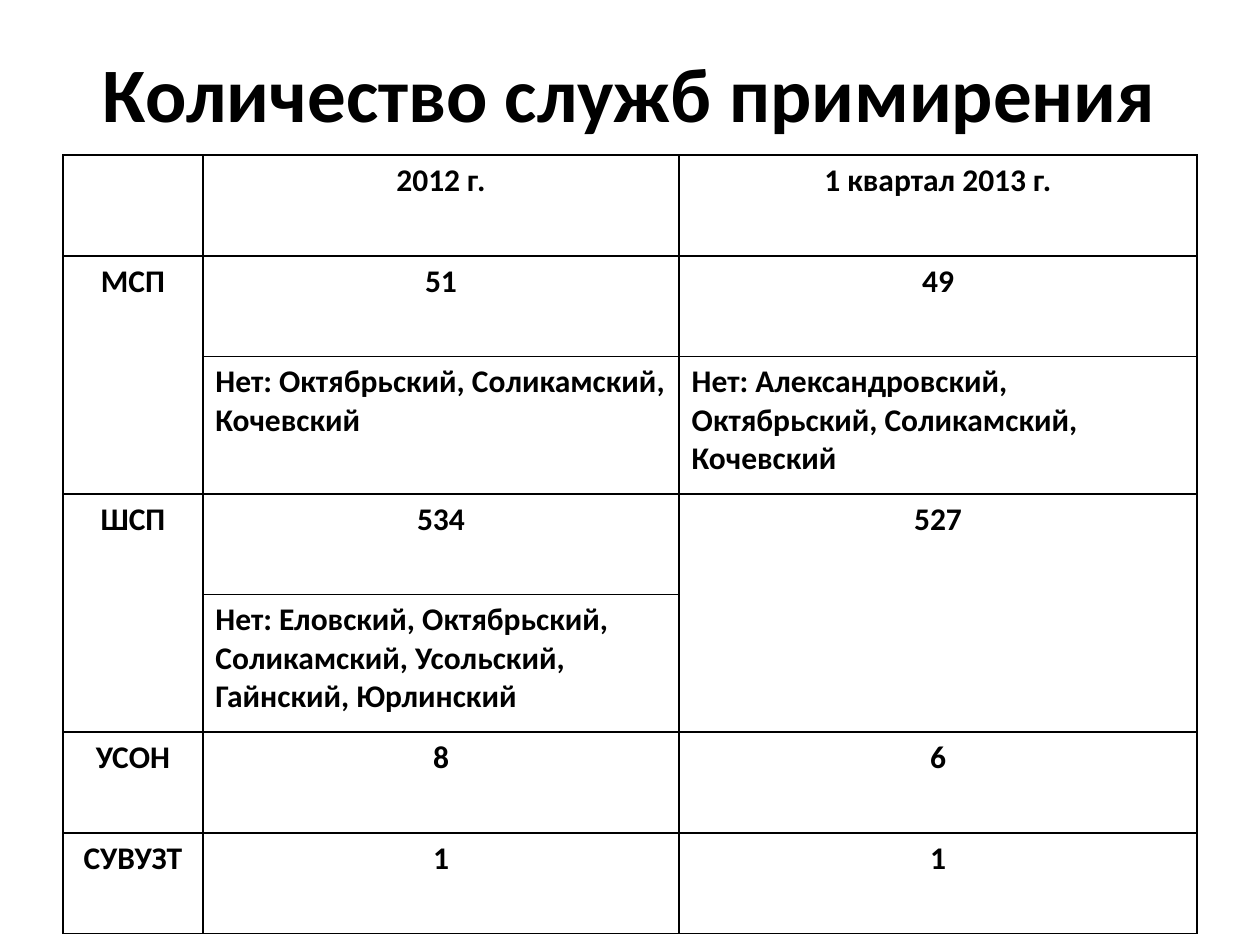
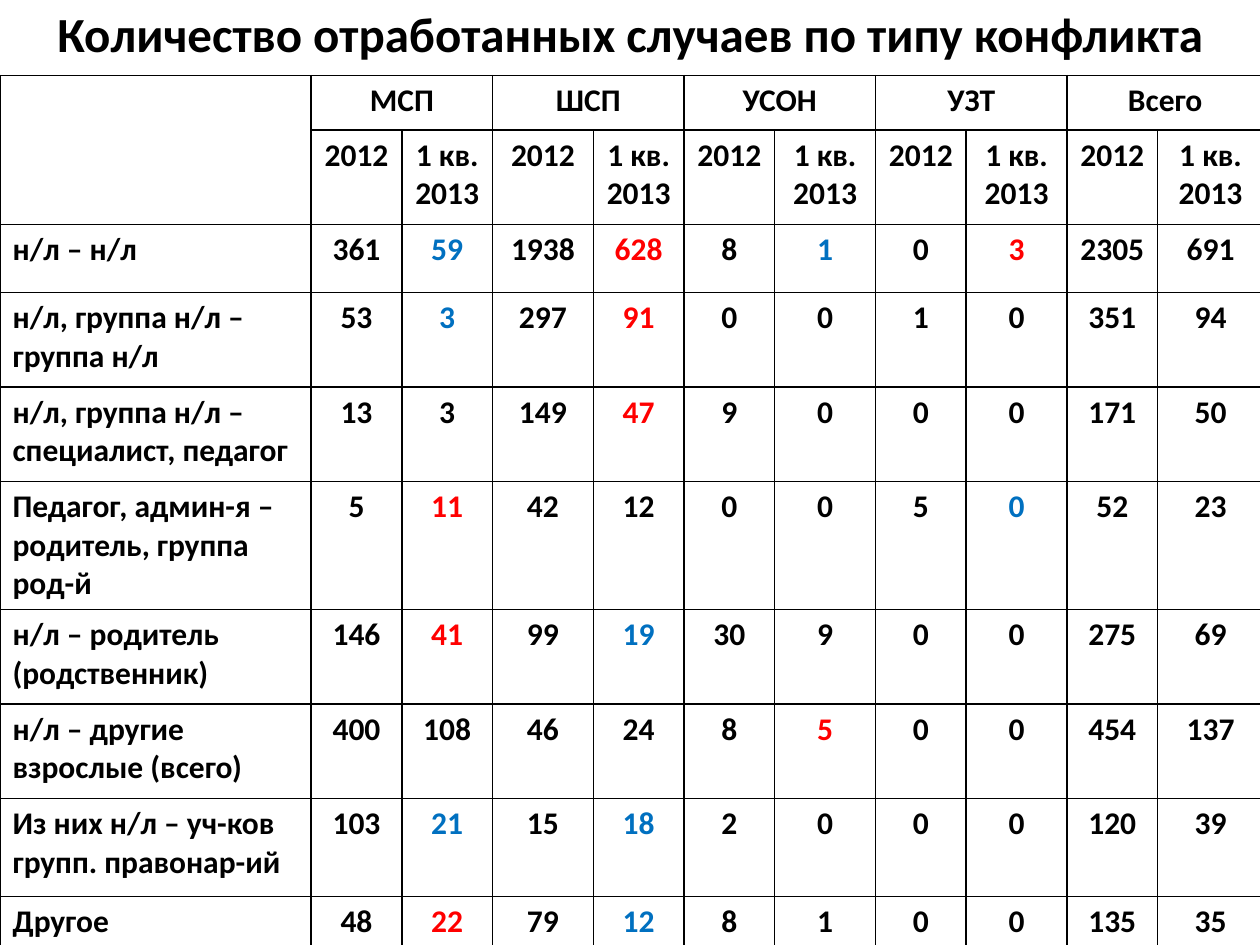
from lxml import etree
from pptx import Presentation
from pptx.dml.color import RGBColor
from pptx.enum import text
from pptx.oxml import ns
from pptx.util import Inches, Pt

FONT = "Calibri"
COLORS = {"text": "000000", "border": "000000", "up": "FF0000", "down": "0070C0"}
MARKS = {"+": "up", "-": "down"}  # last character of a highlighted value


def style(p, size, color="text", align=text.PP_ALIGN.CENTER):
    p.alignment = align
    p.font.name, p.font.size, p.font.bold = FONT, Pt(size), True
    p.font.color.rgb = RGBColor.from_string(COLORS[color])


def add_border(cell):
    """Draw a thin solid line on all four sides of a table cell."""
    tc_pr = cell._tc.get_or_add_tcPr()
    for side in ("a:lnL", "a:lnR", "a:lnT", "a:lnB"):
        ln = etree.SubElement(tc_pr, ns.qn(side), w=str(Pt(1)))
        fill = etree.SubElement(ln, ns.qn("a:solidFill"))
        etree.SubElement(fill, ns.qn("a:srgbClr"), val=COLORS["border"])


services = [
    ["", "2012 г.", "1 квартал 2013 г."],
    ["МСП", "51", "49"],
    ["", "Нет: Октябрьский, Соликамский, Кочевский",
     "Нет: Александровский, Октябрьский, Соликамский, Кочевский"],
    ["ШСП", "534", "527"],
    ["", "Нет: Еловский, Октябрьский, Соликамский, Усольский, Гайнский, Юрлинский", ""],
    ["УСОН", "8", "6"],
    ["СУВУЗТ", "1", "1"],
]

groups = ["МСП", "ШСП", "УСОН", "УЗТ", "Всего"]
conflicts = {
    "н/л – н/л": "361 59- 1938 628+ 8 1- 0 3+ 2305 691",
    "н/л, группа н/л – группа н/л": "53 3- 297 91+ 0 0 1 0 351 94",
    "н/л, группа н/л – специалист, педагог": "13 3 149 47+ 9 0 0 0 171 50",
    "Педагог, админ-я – родитель, группа род-й": "5 11+ 42 12 0 0 5 0- 52 23",
    "н/л – родитель (родственник)": "146 41+ 99 19- 30 9 0 0 275 69",
    "н/л – другие взрослые (всего)": "400 108 46 24 8 5+ 0 0 454 137",
    "Из них н/л – уч-ков групп. правонар-ий": "103 21- 15 18- 2 0 0 0 120 39",
    "Другое": "48 22+ 79 12- 8 1 0 0 135 35",
}
cases = [[""], [""]]
for group in groups:
    cases[0] += [group, ""]
    cases[1] += ["2012", "1 кв. 2013"]
cases += [[label, *values.split()] for label, values in conflicts.items()]

slides = [
    {
        "title": "Количество служб примирения", "size": 44,
        "title_box": (0.5, 0.3, 9, 0.85), "table_box": (0.5, 1.23, 9, 6.2),
        "cols": [1.11, 3.78, 4.11],
        "rows": [0.8, 0.8, 1.09, 0.8, 1.09, 0.8, 0.8],
        "cells": services,
        "left": [(2, 1), (2, 2), (4, 1)],
        "merges": [(1, 0, 2, 0), (3, 0, 4, 0), (3, 2, 4, 2)],
    },
    {
        "title": "Количество отработанных случаев по типу конфликта", "size": 28,
        "title_box": (0, 0, 10, 0.52), "table_box": (0, 0.6, 10, 6.91),
        "cols": [2.47, 0.72, 0.72, 0.8, 0.72, 0.72, 0.8, 0.72, 0.8, 0.72, 0.84],
        "rows": [0.43, 0.75, 0.54, 0.75, 0.75, 0.8, 0.75, 0.75, 0.78, 0.43],
        "cells": cases,
        "left": [(row, 0) for row in range(2, len(cases))],
        "merges": [(0, 0, 1, 0)] + [(0, c, 0, c + 1) for c in range(1, 11, 2)],
    },
]

prs = Presentation()
prs.slide_width, prs.slide_height = Inches(10), Inches(7.5)

for data in slides:
    s = prs.slides.add_slide(prs.slide_layouts[5])
    title = s.shapes.title
    title.left, title.top, title.width, title.height = map(Inches, data["title_box"])
    tf = title.text_frame
    tf.text = data["title"]
    tf.auto_size = text.MSO_AUTO_SIZE.NONE
    tf.vertical_anchor = text.MSO_ANCHOR.MIDDLE
    style(tf.paragraphs[0], data["size"])

    table = s.shapes.add_table(len(data["rows"]), len(data["cols"]),
                               *map(Inches, data["table_box"])).table
    table.first_row = table.horz_banding = False
    for column, width in zip(table.columns, data["cols"]):
        column.width = Inches(width)
    for row, height in zip(table.rows, data["rows"]):
        row.height = Inches(height)

    for r, values in enumerate(data["cells"]):
        for c, value in enumerate(values):
            cell = table.cell(r, c)
            add_border(cell)
            cell.fill.background()
            color = MARKS.get(value[-1:], "text")
            cell.text = value.rstrip("+-")
            left = (r, c) in data["left"]
            style(cell.text_frame.paragraphs[0], 18, color,
                  text.PP_ALIGN.LEFT if left else text.PP_ALIGN.CENTER)
    for top, first, bottom, last in data["merges"]:
        table.cell(top, first).merge(table.cell(bottom, last))

prs.save("out.pptx")
